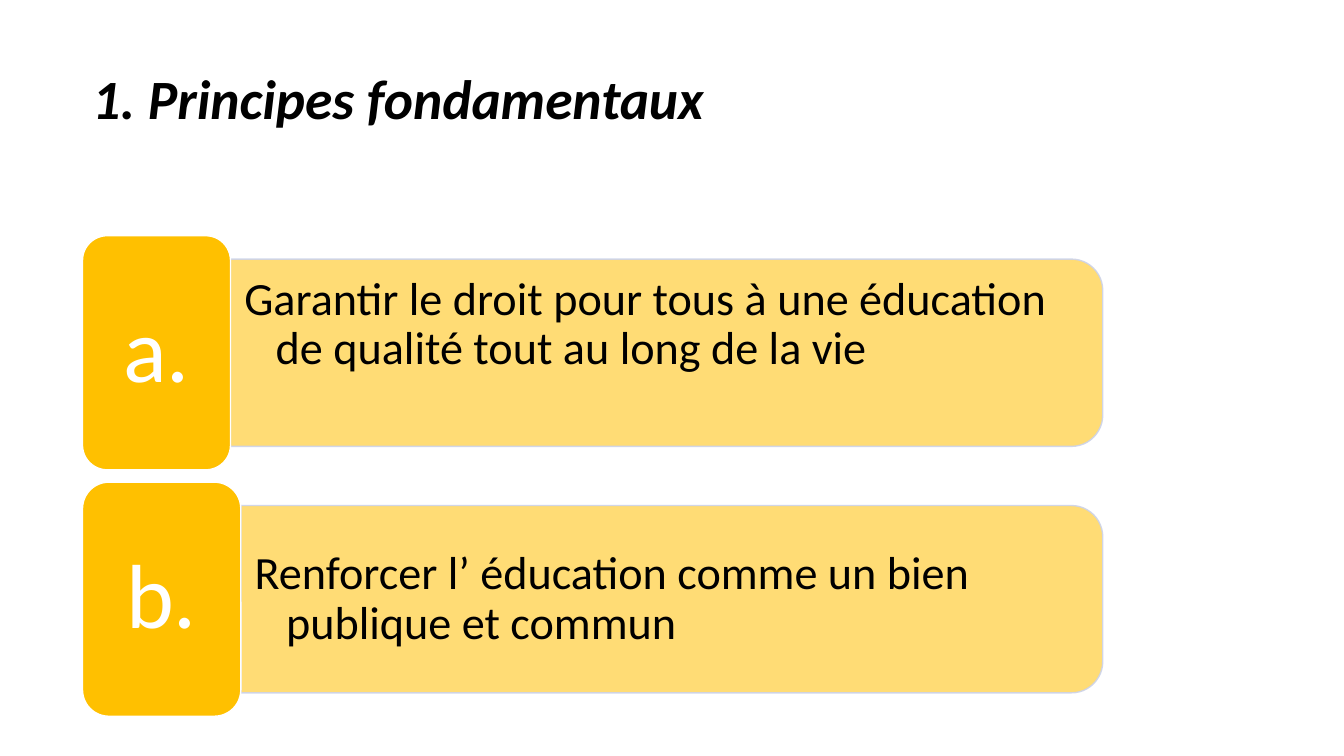
from dataclasses import dataclass

from lxml import etree
from pptx import Presentation
from pptx import util as u
from pptx.dml.color import RGBColor
from pptx.enum import shapes, text
from pptx.oxml.ns import qn
from pptx.shapes.autoshape import Shape
from pptx.slide import Slide


@dataclass(frozen=True)
class Theme:
    font: str = "Calibri"
    black: str = "000000"
    white: str = "FFFFFF"
    tag_fill: str = "FFC000"
    bar_fill: str = "FFD966"
    bar_line: str = "CCD3EA"
    title_size: float = 39.6
    body_size: float = 33
    letter_size: float = 65


@dataclass(frozen=True)
class Principle:
    letter: str
    wording: str
    tag_width: float
    anchor: text.MSO_ANCHOR


THEME = Theme()
PRINCIPLES = [
    Principle("a.", "Garantir le droit pour tous à une éducation de qualité tout au long de la vie",
              3.73, text.MSO_ANCHOR.TOP),
    Principle("b.", "Renforcer l’ éducation comme un bien publique et commun",
              3.99, text.MSO_ANCHOR.MIDDLE),
]

# Lengths in centimetres
LEFT, RIGHT = 2.08, 27.79
FIRST_TOP, PITCH = 5.94, 6.21
TAG_HEIGHT, BAR_HEIGHT, WORDING_HEIGHT = 5.9, 4.72, 4.27
HANGING = 0.79
CORNER = 0.167


def write_text(shape: Shape, content: str, *, size: float, color: str,
               bold: bool = False, italic: bool = False, hanging: float = 0,
               align: text.PP_ALIGN = text.PP_ALIGN.LEFT,
               anchor: text.MSO_ANCHOR = text.MSO_ANCHOR.MIDDLE,
               inset_x: float = 0.25, inset_y: float = 0.13) -> None:
    frame = shape.text_frame
    frame.word_wrap = True
    frame.vertical_anchor = anchor
    frame.margin_left = frame.margin_right = u.Cm(inset_x)
    frame.margin_top = frame.margin_bottom = u.Cm(inset_y)
    paragraph = frame.paragraphs[0]
    paragraph.alignment = align
    paragraph.line_spacing = 0.9
    if hanging:
        properties = paragraph._p.get_or_add_pPr()
        properties.set("marL", str(u.Cm(hanging)))
        properties.set("indent", str(-u.Cm(hanging)))
    run = paragraph.add_run()
    run.text = content
    run.font.name = THEME.font
    run.font.size = u.Pt(size)
    run.font.bold = bold
    run.font.italic = italic
    run.font.color.rgb = RGBColor.from_string(color)


def add_text(slide: Slide, left: float, top: float, width: float, height: float) -> Shape:
    return slide.shapes.add_textbox(u.Cm(left), u.Cm(top), u.Cm(width), u.Cm(height))


def add_block(slide: Slide, kind: shapes.MSO_SHAPE, left: float, top: float,
              width: float, height: float, fill: str, line: str) -> Shape:
    block = slide.shapes.add_shape(kind, u.Cm(left), u.Cm(top), u.Cm(width), u.Cm(height))
    block.shadow.inherit = False
    block.adjustments[0] = CORNER
    block.fill.solid()
    block.fill.fore_color.rgb = RGBColor.from_string(fill)
    block.line.color.rgb = RGBColor.from_string(line)
    block.line.width = u.Pt(1)
    return block


def add_bar(slide: Slide, left: float, middle: float, length: float) -> None:
    """Draw a bar rounded at its right end: a top-rounded rectangle turned a quarter."""
    bar = add_block(slide, shapes.MSO_SHAPE.ROUND_2_SAME_RECTANGLE,
                    left + (length - BAR_HEIGHT) / 2, middle - length / 2,
                    BAR_HEIGHT, length, THEME.bar_fill, THEME.bar_line)
    bar.rotation = 90
    for color in bar._element.spPr.iter(qn("a:srgbClr")):
        etree.SubElement(color, qn("a:alpha"), val="90000")


def add_principle(slide: Slide, principle: Principle, top: float) -> None:
    middle = top + TAG_HEIGHT / 2
    bar_left = LEFT + principle.tag_width
    length = RIGHT - bar_left
    add_bar(slide, bar_left, middle, length)
    wording = add_text(slide, bar_left, middle - WORDING_HEIGHT / 2,
                       length - 0.23, WORDING_HEIGHT)
    write_text(wording, principle.wording, size=THEME.body_size, color=THEME.black,
               hanging=HANGING, anchor=principle.anchor, inset_x=0.35, inset_y=0.18)
    tag = add_block(slide, shapes.MSO_SHAPE.ROUNDED_RECTANGLE, LEFT, top,
                    principle.tag_width, TAG_HEIGHT, THEME.tag_fill, THEME.white)
    write_text(tag, principle.letter, size=THEME.letter_size, color=THEME.white,
               align=text.PP_ALIGN.CENTER)


def main() -> None:
    presentation = Presentation()
    presentation.slide_width = u.Cm(33.87)
    presentation.slide_height = u.Cm(19.05)
    slide = presentation.slides.add_slide(presentation.slide_layouts[6])
    title = add_text(slide, LEFT, 1.67, 29.21, 1.8)
    write_text(title, "1. Principes fondamentaux", size=THEME.title_size,
               color=THEME.black, bold=True, italic=True, anchor=text.MSO_ANCHOR.TOP)
    for row, principle in enumerate(PRINCIPLES):
        add_principle(slide, principle, FIRST_TOP + row * PITCH)
    presentation.save("out.pptx")


if __name__ == "__main__":
    main()
